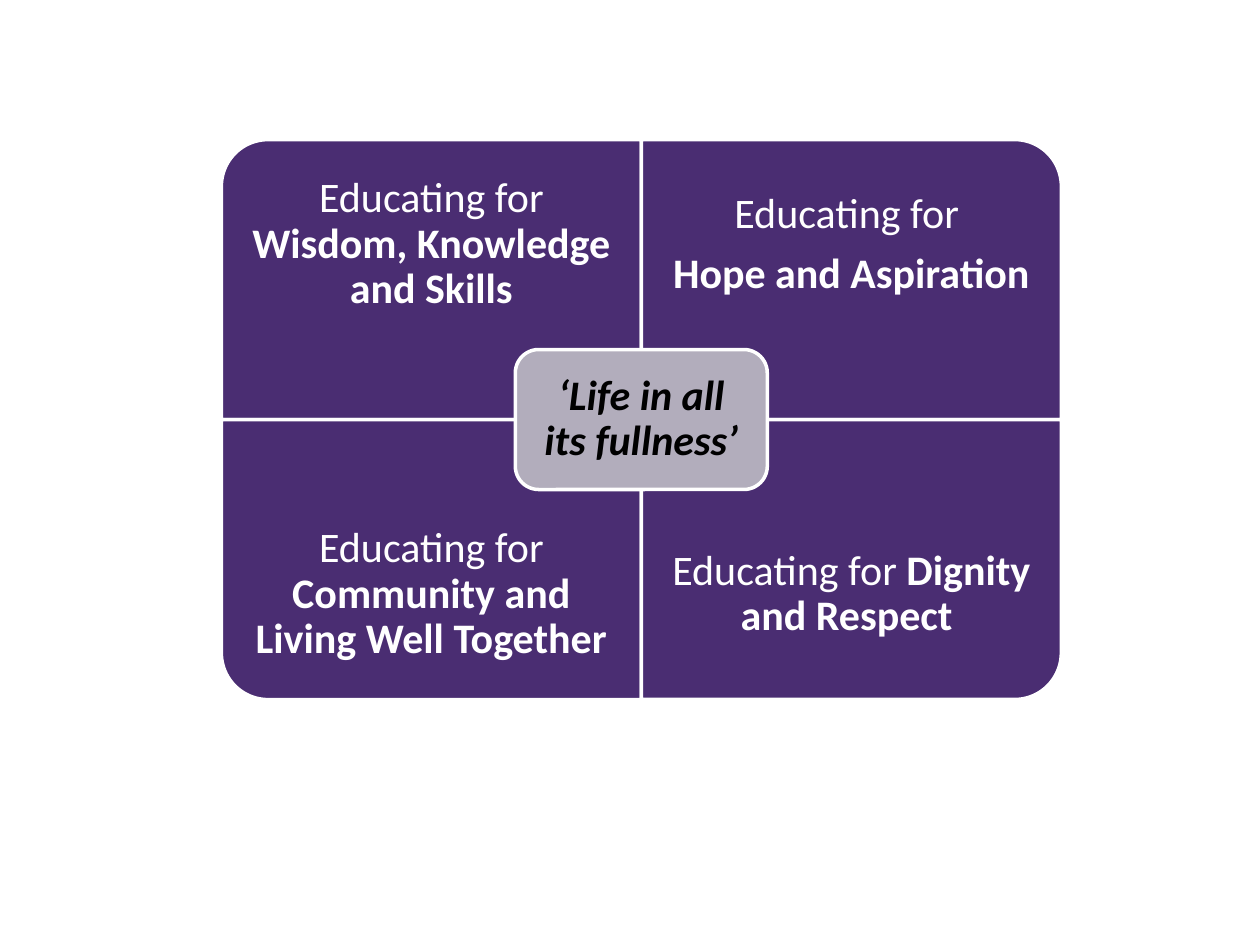
import pptx
import pptx.util
import pptx.dml.color
import pptx.enum.shapes
import pptx.enum.text

THEME = {
    "purple": pptx.dml.color.RGBColor.from_string("4A2D72"),
    "grey": pptx.dml.color.RGBColor.from_string("B2ADBC"),
    "white": pptx.dml.color.RGBColor.from_string("FFFFFF"),
    "black": pptx.dml.color.RGBColor.from_string("000000"),
    "font": "Calibri",
    "size": pptx.util.Pt(24),
    "line": pptx.util.Pt(2),
    "gap": pptx.util.Pt(8.4),
}
SHAPES = pptx.enum.shapes.MSO_SHAPE

presentation = pptx.Presentation()
presentation.slide_width = pptx.util.Inches(10)
presentation.slide_height = pptx.util.Inches(7.5)
slide = presentation.slides.add_slide(presentation.slide_layouts[6])

column = presentation.slide_width / 3
row = column * 2 / 3
middle_x = pptx.util.Inches(5.09)
middle_y = pptx.util.Inches(3.33)


def add_panel(kind, center_x, center_y, width, height, fill, rotation=0):
    shape = slide.shapes.add_shape(
        kind, int(center_x - width / 2), int(center_y - height / 2), int(width), int(height)
    )
    shape.rotation = rotation
    shape.shadow.inherit = False
    shape.fill.solid()
    shape.fill.fore_color.rgb = fill
    shape.line.color.rgb = THEME["white"]
    shape.line.width = THEME["line"]


def add_label(left, top, width, height, inset, paragraphs, color, italic=None):
    box = slide.shapes.add_textbox(int(left), int(top), int(width), int(height))
    frame_format = {"word_wrap": True, "vertical_anchor": pptx.enum.text.MSO_ANCHOR.MIDDLE}
    for side in ("left", "right", "top", "bottom"):
        frame_format[f"margin_{side}"] = pptx.util.Inches(inset)
    for name, value in frame_format.items():
        setattr(box.text_frame, name, value)
    paragraph_format = {
        "alignment": pptx.enum.text.PP_ALIGN.CENTER,
        "line_spacing": 0.9,
        "space_after": THEME["gap"],
    }
    for index, runs in enumerate(paragraphs):
        paragraph = box.text_frame.add_paragraph() if index else box.text_frame.paragraphs[0]
        for name, value in paragraph_format.items():
            setattr(paragraph, name, value)
        for text, bold in runs:
            run = paragraph.add_run()
            run.text = text
            font_format = {"name": THEME["font"], "size": THEME["size"], "bold": bold, "italic": italic}
            for name, value in font_format.items():
                setattr(run.font, name, value)
            run.font.color.rgb = color


opening = ("Educating for ", False)
quadrants = [
    (-1, -1, 270, [[opening, ("Wisdom, Knowledge and Skills", True)]]),
    (1, -1, 0, [[opening], [("Hope and Aspiration", True)]]),
    (-1, 1, 180, [[opening, ("Community and Living Well Together", True)]]),
    (1, 1, 90, [[opening, ("Dignity and Respect ", True)]]),
]
for side_x, side_y, rotation, paragraphs in quadrants:
    center_x = middle_x + side_x * column / 2
    center_y = middle_y + side_y * row / 2
    width, height = (row, column) if rotation in (90, 270) else (column, row)
    add_panel(SHAPES.ROUND_1_RECTANGLE, center_x, center_y, width, height, THEME["purple"], rotation)
    label_height = row * 3 / 4
    label_top = middle_y - row if side_y < 0 else middle_y + row - label_height
    add_label(center_x - column / 2, label_top, column, label_height, 0.19, paragraphs, THEME["white"])

core_width, core_height = column * 0.6, row / 2
padding = pptx.util.Inches(0.05)
add_panel(SHAPES.ROUNDED_RECTANGLE, middle_x, middle_y, core_width, core_height, THEME["grey"])
add_label(
    middle_x - core_width / 2 + padding,
    middle_y - core_height / 2 + padding,
    core_width - 2 * padding,
    core_height - 2 * padding,
    0.1,
    [[("‘Life in all its fullness’", True)]],
    THEME["black"],
    True,
)

presentation.save("out.pptx")
